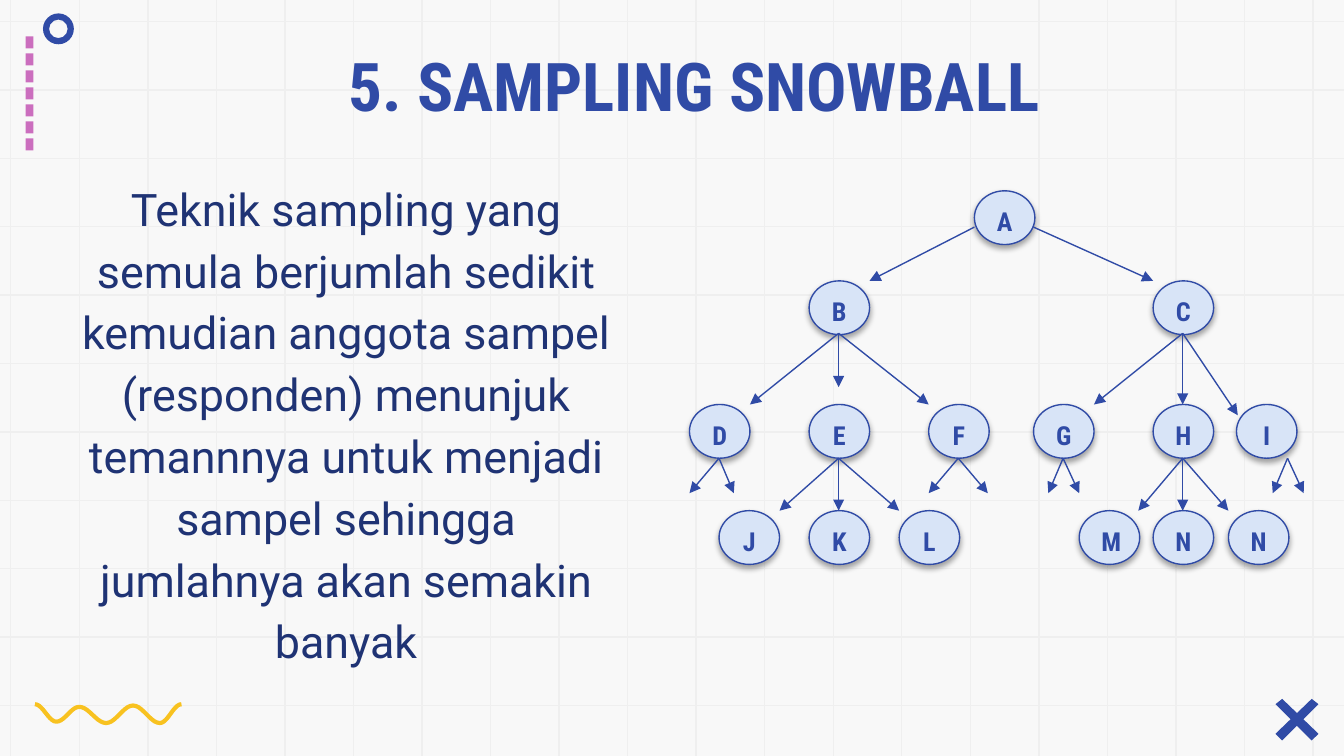
from dataclasses import dataclass
from math import cos, pi

from lxml.etree import SubElement
from pptx import Presentation
from pptx.dml.color import RGBColor
from pptx.enum.shapes import MSO_CONNECTOR as Connector, MSO_SHAPE as Preset
from pptx.enum.text import MSO_ANCHOR as Anchor, MSO_AUTO_SIZE as AutoSize, PP_ALIGN as Align
from pptx.oxml.ns import qn
from pptx.util import Inches, Pt


@dataclass(frozen=True)
class Theme:
    paper: str = "F8F8F8"
    grid: str = "EFEFEF"
    blue: str = "304BA6"
    navy: str = "1F3374"
    pale: str = "D8E4F7"
    pink: str = "CB6EBE"
    yellow: str = "F8C220"
    shadow: str = "000000"
    heading_font: str = "Roboto Condensed"
    body_font: str = "Roboto"
    title_size: float = 36
    body_size: float = 24
    node_size: float = 14
    line_width: float = 0.75
    wave_width: float = 2.25


WIDTH = 10
HEIGHT = WIDTH * 9 / 16
NODE_WIDTH, NODE_HEIGHT = 0.45, 0.4
ROW_STEP = (5.25 - 0.16) / 10
COLUMN_STEP = (9.77 - 0.08) / 19
DASH_STEP = (1.03 - 0.27) / 6
NODE_ROWS = {
    1.42: [("A", 7.25)],
    2.09: [("B", 6.02), ("C", 8.58)],
    3.01: [("D", 5.13), ("E", 6.02), ("F", 6.91), ("G", 7.69), ("H", 8.58), ("I", 9.2)],
    3.8: [("J", 5.35), ("K", 6.02), ("L", 6.69), ("M", 8.03), ("N", 8.58), ("N", 9.14)],
}
ARROWS = {
    (7.25, 1.69): [(6.47, 2.09)],
    (7.69, 1.69): [(8.58, 2.09)],
    (6.24, 2.48): [(5.58, 3.01), (6.24, 2.88), (6.91, 3.01)],
    (8.8, 2.48): [(8.14, 3.01), (8.8, 3.01), (9.21, 3.09)],
    (6.24, 3.41): [(5.8, 3.8), (6.24, 3.8), (6.69, 3.8)],
    (8.8, 3.41): [(8.47, 3.8), (8.8, 3.8), (9.14, 3.8)],
    (5.35, 3.41): [(5.13, 3.67), (5.46, 3.67)],
    (7.13, 3.41): [(6.91, 3.67), (7.35, 3.67)],
    (7.91, 3.41): [(7.8, 3.67), (8.03, 3.67)],
    (9.58, 3.41): [(9.47, 3.67), (9.7, 3.67)],
}
WAVE_TURNS = [(0.26, 5.24), (0.42, 5.37), (0.59, 5.26), (0.79, 5.38),
              (0.99, 5.25), (1.19, 5.38), (1.35, 5.24)]
BODY_TEXT = ("Teknik sampling yang semula berjumlah sedikit kemudian anggota sampel "
             "(responden) menunjuk temannnya untuk menjadi sampel sehingga "
             "jumlahnya akan semakin banyak")


def write_text(frame, text, font, size, color, bold=False, spacing=1.0, inset=0.1):
    frame.word_wrap = True
    frame.auto_size = AutoSize.NONE
    frame.vertical_anchor = Anchor.TOP
    frame.margin_left = frame.margin_right = Inches(0.1)
    frame.margin_top = frame.margin_bottom = Inches(inset)
    para = frame.paragraphs[0]
    para.alignment = Align.CENTER
    para.line_spacing = spacing
    span = para.add_run()
    span.text = text
    span.font.name = font
    span.font.size = Pt(size)
    span.font.bold = bold
    span.font.color.rgb = RGBColor.from_string(color)


def smooth_wave(turns, steps=10):
    points = [turns[0]]
    for (x1, y1), (x2, y2) in zip(turns, turns[1:]):
        for step in range(1, steps + 1):
            part = step / steps
            points.append((x1 + (x2 - x1) * part,
                           y1 + (y2 - y1) * (1 - cos(pi * part)) / 2))
    return points


class SlideBuilder:
    def __init__(self, page, theme):
        self.page = page
        self.theme = theme
        page.background.fill.solid()
        page.background.fill.fore_color.rgb = RGBColor.from_string(theme.paper)

    def paint(self, shape, fill):
        shape.shadow.inherit = False
        shape.fill.solid()
        shape.fill.fore_color.rgb = RGBColor.from_string(fill)
        shape.line.fill.background()

    def title(self, text, left, top, width, height):
        box = self.page.shapes.title
        box.left, box.top, box.width, box.height = map(Inches, (left, top, width, height))
        write_text(box.text_frame, text, self.theme.heading_font,
                   self.theme.title_size, self.theme.blue, bold=True)
        self.page.shapes._spTree.append(box._element)

    def body(self, text, left, top, width, height):
        box = self.page.shapes.add_textbox(*map(Inches, (left, top, width, height)))
        write_text(box.text_frame, text, self.theme.body_font,
                   self.theme.body_size, self.theme.navy, spacing=1.15)

    def preset(self, kind, left, top, width, height, fill):
        shape = self.page.shapes.add_shape(kind, *map(Inches, (left, top, width, height)))
        self.paint(shape, fill)
        return shape

    def outline(self, points, closed=True):
        corners = [(Inches(x), Inches(y)) for x, y in points]
        builder = self.page.shapes.build_freeform(*corners[0])
        builder.add_line_segments(corners[1:], close=closed)
        return builder.convert_to_shape()

    def polygon(self, points, fill):
        self.paint(self.outline(points), fill)

    def wave(self, turns, color):
        shape = self.outline(smooth_wave(turns), closed=False)
        shape.shadow.inherit = False
        shape.fill.background()
        shape.line.color.rgb = RGBColor.from_string(color)
        shape.line.width = Pt(self.theme.wave_width)

    def line(self, start, end, color):
        link = self.page.shapes.add_connector(
            Connector.STRAIGHT, *map(Inches, (*start, *end)))
        link.line.color.rgb = RGBColor.from_string(color)
        link.line.width = Pt(self.theme.line_width)
        SubElement(link._element.spPr, qn("a:effectLst"))
        return link

    def arrow(self, start, end):
        link = self.line(start, end, self.theme.blue)
        SubElement(link.line._get_or_add_ln(), qn("a:tailEnd"), type="triangle")

    def node(self, label, left, top):
        shape = self.preset(Preset.OVAL, left, top, NODE_WIDTH, NODE_HEIGHT, self.theme.pale)
        shape.line.color.rgb = RGBColor.from_string(self.theme.blue)
        shape.line.width = Pt(self.theme.line_width)
        effects = shape._element.spPr.find(qn("a:effectLst"))
        shadow = SubElement(effects, qn("a:outerShdw"), blurRad=str(Pt(3.1)),
                            dist=str(Pt(1.8)), dir="5400000", rotWithShape="0")
        color = SubElement(shadow, qn("a:srgbClr"), val=self.theme.shadow)
        SubElement(color, qn("a:alpha"), val="35000")
        write_text(shape.text_frame, label, self.theme.heading_font,
                   self.theme.node_size, self.theme.blue, bold=True, inset=0.05)

    def grid(self):
        for row in range(11):
            y = 0.16 + row * ROW_STEP
            self.line((WIDTH, y), (0, y), self.theme.grid)
        for column in range(20):
            x = 0.08 + column * COLUMN_STEP
            self.line((x, 0), (x, HEIGHT), self.theme.grid)

    def ornaments(self):
        for index in range(7):
            self.preset(Preset.RECTANGLE, 0.19, 0.27 + index * DASH_STEP, 0.06, 0.09,
                        self.theme.pink)
        bar = [(9.76, 5.2), (9.81, 5.24), (9.54, 5.51), (9.49, 5.46)]
        self.polygon(bar, self.theme.blue)
        self.polygon([(9.49 + 9.81 - x, y) for x, y in bar], self.theme.blue)
        self.wave(WAVE_TURNS, self.theme.yellow)
        ring = self.preset(Preset.DONUT, 0.32, 0.1, 0.23, 0.23, self.theme.blue)
        ring.adjustments[0] = 0.2


def main():
    deck = Presentation()
    deck.slide_width, deck.slide_height = Inches(WIDTH), Inches(HEIGHT)
    slide = SlideBuilder(deck.slides.add_slide(deck.slide_layouts[5]), Theme())
    slide.grid()
    slide.ornaments()
    slide.title("5. SAMPLING SNOWBALL", 0.95, 0.23, 8.43, 0.63)
    slide.body(BODY_TEXT, 0.47, 1.19, 4.21, 4.05)
    for top, nodes in NODE_ROWS.items():
        for label, left in nodes:
            slide.node(label, left, top)
    for start, ends in ARROWS.items():
        for end in ends:
            slide.arrow(start, end)
    deck.save("out.pptx")


if __name__ == "__main__":
    main()
